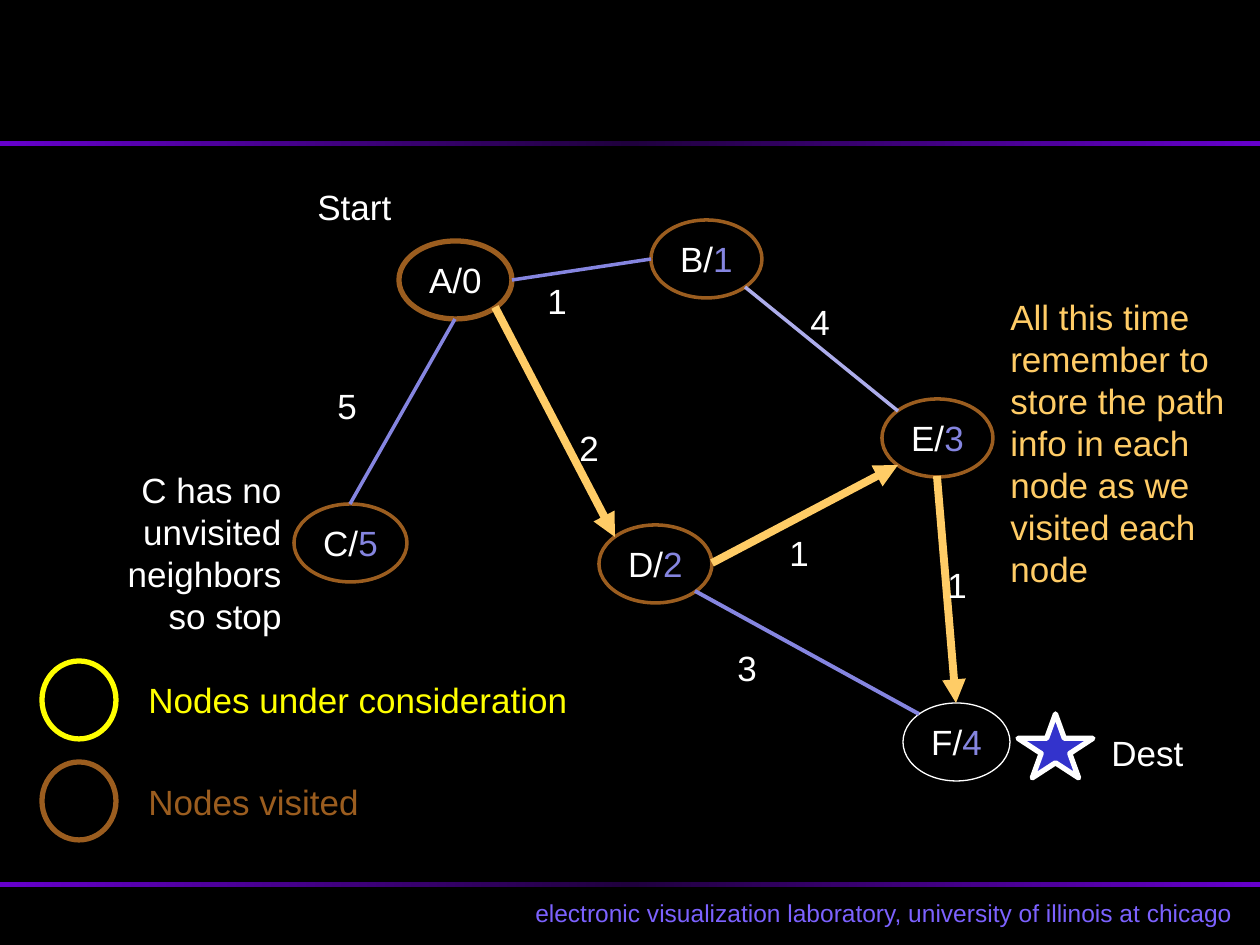
"""Build the shortest-path graph slide with its legend and remarks."""
from copy import deepcopy
from pptx import Presentation
from pptx.dml.color import RGBColor
from pptx.enum.shapes import MSO_CONNECTOR, MSO_SHAPE
from pptx.enum.text import MSO_ANCHOR, MSO_AUTO_SIZE, PP_ALIGN
from pptx.oxml.ns import qn
from pptx.oxml.xmlchemy import OxmlElement
from pptx.util import Pt

PX = 914400 / 126
LEFT, MID, RIGHT = PP_ALIGN.LEFT, PP_ALIGN.CENTER, PP_ALIGN.RIGHT
OVAL, RECT, STAR = MSO_SHAPE.OVAL, MSO_SHAPE.RECTANGLE, MSO_SHAPE.STAR_5_POINT
STRAIGHT = MSO_CONNECTOR.STRAIGHT
CENTRE = MSO_ANCHOR.MIDDLE
GROW = MSO_AUTO_SIZE.SHAPE_TO_FIT_TEXT
BLACK = RGBColor(0x00, 0x00, 0x00)
WHITE = RGBColor(0xFF, 0xFF, 0xFF)
BROWN = RGBColor(0x9B, 0x5D, 0x1F)
YELLOW = RGBColor(0xFF, 0xFF, 0x00)
GOLD = RGBColor(0xFF, 0xCC, 0x66)
LILAC = RGBColor(0x85, 0x85, 0xE0)
PALE = RGBColor(0xAD, 0xAD, 0xEB)
BLUE = RGBColor(0x33, 0x33, 0xCC)
PURPLE = RGBColor(0x66, 0x00, 0xCC)
DARK = RGBColor(0x1F, 0x00, 0x3D)
VIOLET = RGBColor(0x7C, 0x62, 0xFF)

prs = Presentation()
prs.slide_width, prs.slide_height = round(1260 * PX), round(945 * PX)
slide = prs.slides.add_slide(prs.slide_layouts[6])
slide.background.fill.solid()
slide.background.fill.fore_color.rgb = BLACK
shapes = slide.shapes


def add_form(kind, box, fill, line, width):
    form = shapes.add_shape(kind, *[round(v * PX) for v in box])
    form.shadow.inherit = False
    form.fill.solid()
    form.fill.fore_color.rgb = fill
    form.line.color.rgb = line
    form.line.width = Pt(width)
    return form


def add_text(text, box, color=WHITE, size=20, align=LEFT, wrap=False):
    frame = shapes.add_textbox(*[round(v * PX) for v in box]).text_frame
    frame.word_wrap = wrap
    frame.auto_size = GROW
    para = frame.paragraphs[0]
    para.text = text
    para.alignment = align
    para.font.name = "Arial"
    para.font.size = Pt(size)
    para.font.color.rgb = color


for top in (141, 882):
    bar = add_form(RECT, (0, top, 1260, 5), PURPLE, PURPLE, 1)
    bar.line.fill.background()
    bar.fill.gradient()
    bar.fill.gradient_angle = 0
    stops = bar._element.spPr.find(".//" + qn("a:gsLst"))
    stops.append(deepcopy(stops[0]))
    for stop, pos, color in zip(bar.fill.gradient_stops, (0, 0.5, 1), (PURPLE, DARK, PURPLE)):
        stop.position = pos
        stop.color.rgb = color

add_text("electronic visualization laboratory, university of illinois at chicago",
         (513, 892, 742, 42), VIOLET, 14, MID)

nodes = [
    ("A/", "0", 399, 241, 113, BROWN, 3, WHITE),
    ("B/", "1", 651, 220, 111, BROWN, 2, LILAC),
    ("E/", "3", 882, 399, 111, BROWN, 2, LILAC),
    ("D/", "2", 599, 525, 113, BROWN, 2, LILAC),
    ("C/", "5", 294, 504, 113, BROWN, 2, LILAC),
    ("F/", "4", 903, 703, 107, WHITE, 0.75, LILAC),
]
for name, cost, left, top, wide, line, width, color in nodes:
    frame = add_form(OVAL, (left, top, wide, 78), BLACK, line, width).text_frame
    frame.word_wrap = False
    frame.vertical_anchor = CENTRE
    para = frame.paragraphs[0]
    para.alignment = MID
    for text, tint in ((name, WHITE), (cost, color)):
        run = para.add_run()
        run.text = text
        run.font.name = "Arial"
        run.font.size = Pt(20)
        run.font.color.rgb = tint

edges = [
    (512, 280, 651, 259, LILAC, 2),
    (455, 319, 350, 504, LILAC, 2),
    (495, 307, 615, 537, GOLD, 4.5),
    (745, 287, 898, 411, PALE, 2),
    (712, 563, 898, 465, GOLD, 4.5),
    (695, 591, 919, 714, LILAC, 2.25),
    (937, 476, 956, 703, GOLD, 4.5),
]
for *ends, color, width in edges:
    edge = shapes.add_connector(STRAIGHT, *[round(v * PX) for v in ends])
    edge.line.color.rgb = color
    edge.line.width = Pt(width)
    if color == GOLD:
        tip = OxmlElement("a:tailEnd")
        tip.set("type", "triangle")
        edge.line._get_or_add_ln().append(tip)
    edge._element.spPr.append(OxmlElement("a:effectLst"))

costs = [("1", 535, 273), ("2", 567, 420), ("4", 798, 294), ("1", 777, 525),
         ("1", 935, 557), ("3", 725, 640), ("5", 325, 378)]
for cost, left, top in costs:
    add_text(cost, (left, top, 45, 55))

add_form(STAR, (1018, 714, 75, 64), BLUE, WHITE, 3)
add_text("Start", (305, 179, 99, 55))
add_text("Dest", (1099, 725, 98, 55))

legend = [("Nodes under consideration", 661, 672, 447, YELLOW),
          ("Nodes visited", 762, 774, 238, BROWN)]
for text, ring, top, wide, color in legend:
    add_form(OVAL, (42, ring, 74, 78), BLACK, color, 3)
    add_text(text, (136, top, wide, 55), color)

add_text("C has no unvisited neighbors so stop", (84, 462, 210, 183), align=RIGHT, wrap=True)
add_text("All this time remember to store the path info in each node as we visited each node",
         (998, 289, 252, 310), GOLD, wrap=True)

prs.save("out.pptx")
